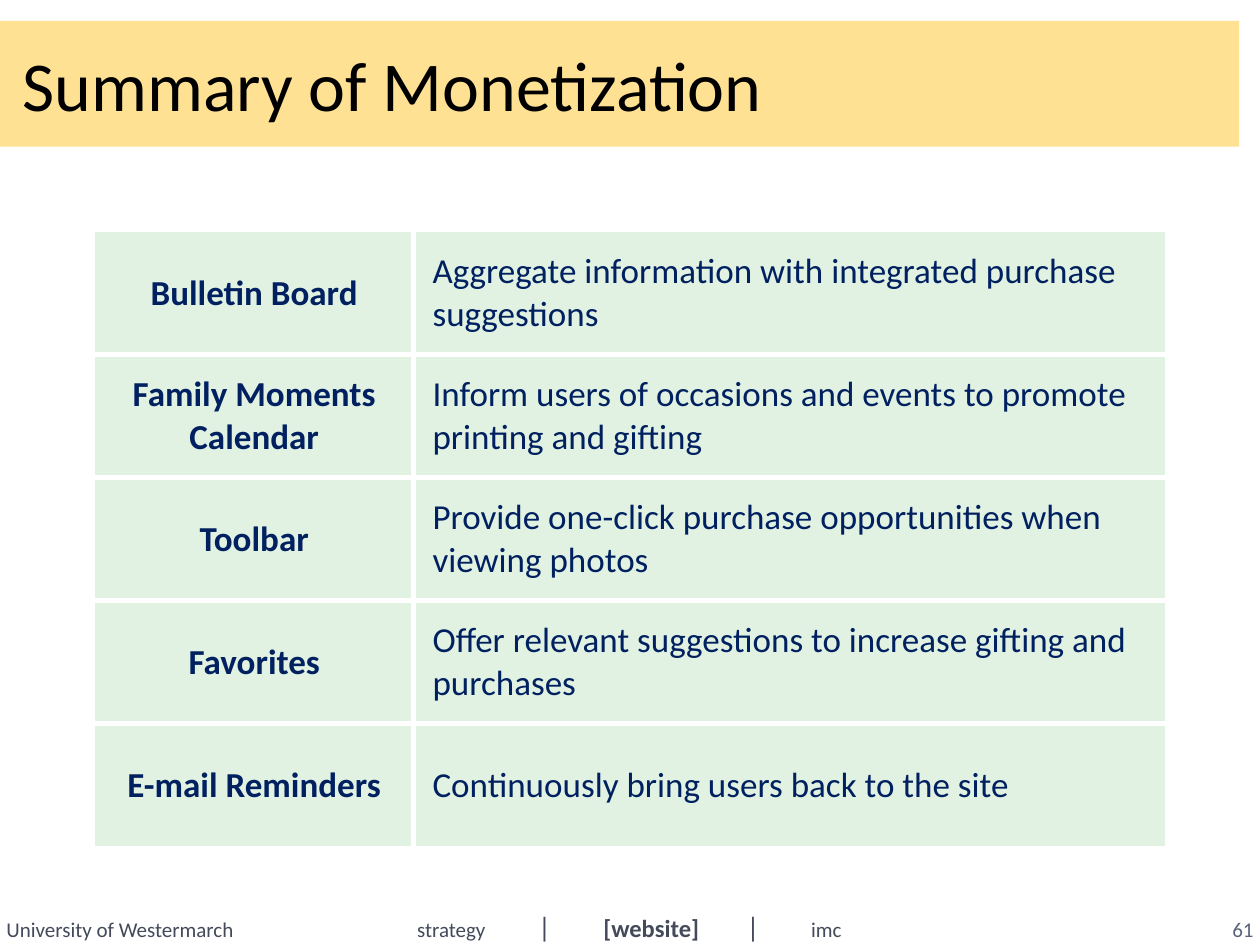
from dataclasses import dataclass

from lxml.etree import SubElement
from pptx import Presentation
from pptx.dml.color import RGBColor
from pptx.enum.shapes import MSO_SHAPE
from pptx.enum.text import MSO_ANCHOR, PP_ALIGN
from pptx.oxml import parse_xml
from pptx.oxml.ns import nsdecls, qn
from pptx.util import Cm, Pt


@dataclass(frozen=True)
class Theme:
    font: str = "Calibri"
    title_color: str = "000000"
    band: str = "FFE193"
    cell_fill: str = "E1F1E2"
    cell_text: str = "002060"
    rule: str = "FFFFFF"
    footer: str = "444A5A"
    page_number: str = "5A6378"
    title_size: int = 40
    table_size: int = 20
    footer_size: int = 12
    active_size: int = 14
    divider_size: int = 16
    rule_width: int = 3


def write_text(paragraph, text, *, font, size, color, bold=False, align=PP_ALIGN.LEFT):
    paragraph.alignment = align
    run = paragraph.add_run()
    run.text = text
    run.font.name = font
    run.font.size = Pt(size)
    run.font.bold = bold
    run.font.color.rgb = RGBColor.from_string(color)


def set_margins(target, horizontal, vertical):
    target.margin_left = target.margin_right = Cm(horizontal)
    target.margin_top = target.margin_bottom = Cm(vertical)


def set_borders(cell, sides, color, width):
    properties = cell._tc.get_or_add_tcPr()
    for index, side in enumerate(sides):
        properties.insert(index, parse_xml(
            f'<a:ln{side} {nsdecls("a")} w="{Pt(width)}"><a:solidFill>'
            f'<a:srgbClr val="{color}"/></a:solidFill></a:ln{side}>'))


class SlideBuilder:
    def __init__(self, slide, theme):
        self.slide = slide
        self.theme = theme

    def band(self, left, top, width, height):
        shape = self.slide.shapes.add_shape(
            MSO_SHAPE.RECTANGLE, Cm(left), Cm(top), Cm(width), Cm(height))
        shape.shadow.inherit = False
        shape.fill.solid()
        shape.fill.fore_color.rgb = RGBColor.from_string(self.theme.band)
        shape.line.fill.background()

    def text_box(self, left, top, width, height, runs, *, margins=(0.25, 0.13),
                 align=PP_ALIGN.LEFT):
        shape = self.slide.shapes.add_textbox(Cm(left), Cm(top), Cm(width), Cm(height))
        frame = shape.text_frame
        frame.word_wrap = True
        frame.vertical_anchor = MSO_ANCHOR.MIDDLE
        set_margins(frame, *margins)
        paragraph = frame.paragraphs[0]
        for text, size, color, bold in runs:
            write_text(paragraph, text, font=self.theme.font, size=size,
                       color=color, bold=bold, align=align)
        return paragraph

    def navigation(self, left, top, width, height, entries):
        theme = self.theme
        runs = [("\t" + text, size, theme.footer, bold) for text, size, bold, _ in entries]
        paragraph = self.text_box(left, top, width, height, runs, margins=(0, 0.13))
        tab_list = SubElement(paragraph._p.get_or_add_pPr(), qn("a:tabLst"))
        for *_, center in entries:
            SubElement(tab_list, qn("a:tab"), pos=str(Cm(center)), algn="ctr")

    def table(self, left, top, column_widths, row_height, rows):
        theme = self.theme
        table = self.slide.shapes.add_table(
            len(rows), len(column_widths), Cm(left), Cm(top),
            Cm(sum(column_widths)), Cm(row_height * len(rows))).table
        table.first_row = table.horz_banding = False
        for column, width in zip(table.columns, column_widths):
            column.width = Cm(width)
        for row_index, texts in enumerate(rows):
            table.rows[row_index].height = Cm(row_height)
            for column_index, text in enumerate(texts):
                cell = table.cell(row_index, column_index)
                is_label = column_index == 0
                cell.vertical_anchor = MSO_ANCHOR.MIDDLE
                set_margins(cell, *((0.25, 0.13) if is_label else (0.38, 0.38)))
                cell.fill.solid()
                cell.fill.fore_color.rgb = RGBColor.from_string(theme.cell_fill)
                sides = ["R" if is_label else "L"]
                if row_index > 0:
                    sides.append("T")
                if row_index < len(rows) - 1:
                    sides.append("B")
                set_borders(cell, sides, theme.rule, theme.rule_width)
                write_text(cell.text_frame.paragraphs[0], text, font=theme.font,
                           size=theme.table_size, color=theme.cell_text, bold=is_label,
                           align=PP_ALIGN.CENTER if is_label else PP_ALIGN.LEFT)


def main():
    presentation = Presentation()
    presentation.slide_width = Cm(25.4)
    presentation.slide_height = Cm(19.05)
    slide = presentation.slides.add_slide(presentation.slide_layouts[6])
    theme = Theme()
    builder = SlideBuilder(slide, theme)

    builder.text_box(0, 18.42, 11.63, 0.63,
                     [("University of Westermarch", theme.footer_size, theme.footer, False)],
                     margins=(0.13, 0.13))
    builder.band(0, 0.42, 24.98, 2.54)
    builder.navigation(0, 18.26, 25.4, 0.84, [
        ("strategy", theme.footer_size, False, 9.1),
        ("|", theme.divider_size, False, 10.98),
        ("[website]", theme.active_size, True, 13.13),
        ("|", theme.divider_size, False, 15.18),
        ("imc", theme.footer_size, False, 16.66),
    ])
    builder.text_box(0.21, 0.21, 24.98, 2.96,
                     [("Summary of Monetization", theme.title_size, theme.title_color, False)])
    builder.table(1.91, 4.67, (6.43, 15.16), 2.48, [
        ("Bulletin Board", "Aggregate information with integrated purchase suggestions"),
        ("Family Moments Calendar",
         "Inform users of occasions and events to promote printing and gifting"),
        ("Toolbar", "Provide one-click purchase opportunities when viewing photos"),
        ("Favorites", "Offer relevant suggestions to increase gifting and purchases"),
        ("E-mail Reminders", "Continuously bring users back to the site"),
    ])
    builder.text_box(23.07, 18.42, 2.33, 0.63,
                     [("61", theme.footer_size, theme.page_number, False)],
                     margins=(0.13, 0.13), align=PP_ALIGN.RIGHT)

    presentation.save("out.pptx")


if __name__ == "__main__":
    main()
